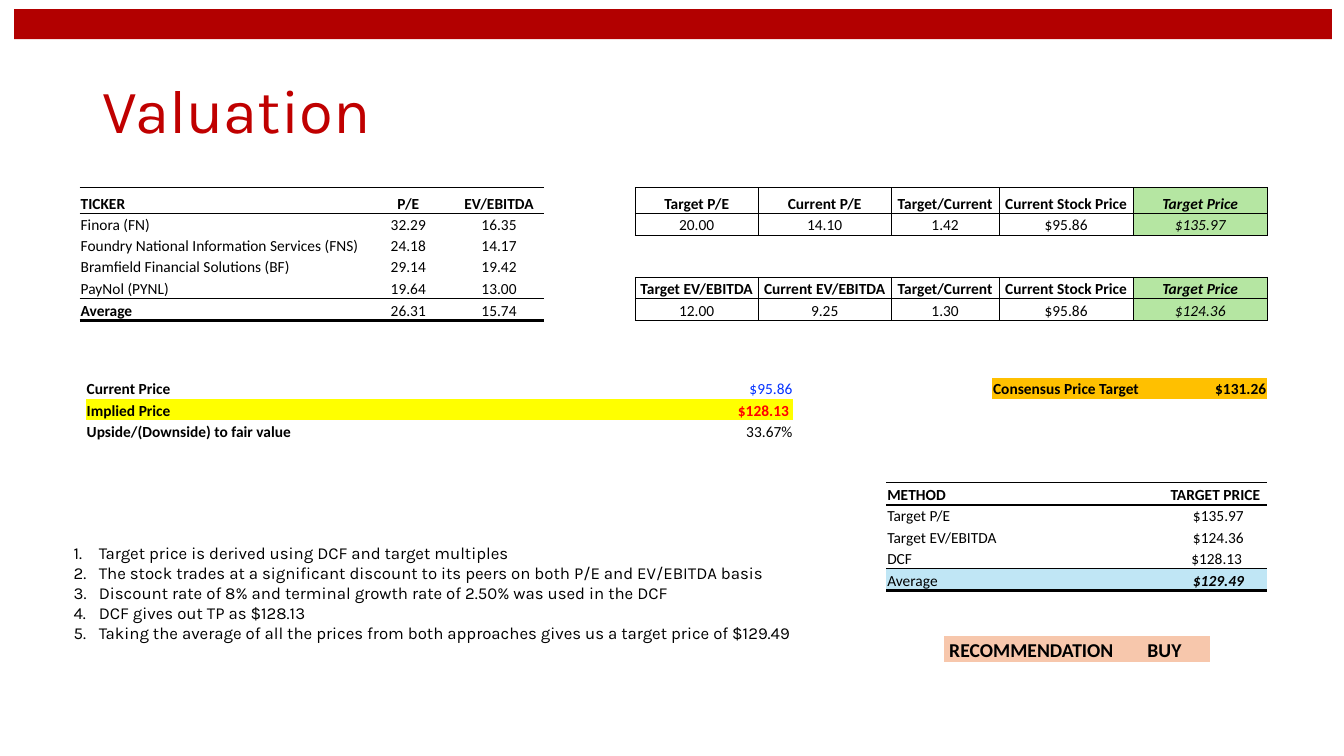
from collections.abc import Callable
from dataclasses import dataclass, field

from lxml.etree import SubElement
from pptx import Presentation
from pptx.dml.color import RGBColor
from pptx.enum.shapes import MSO_SHAPE
from pptx.enum.text import MSO_ANCHOR, MSO_AUTO_SIZE, PP_ALIGN
from pptx.oxml.ns import qn
from pptx.util import Inches, Pt


@dataclass(frozen=True)
class Theme:
    heading_font: str = "Karla"
    table_font: str = "Calibri"
    title_size: int = 44
    banner_size: int = 14
    note_size: int = 12
    table_size: int = 11
    bar: str = "B20000"
    title: str = "C00000"
    ink: str = "000000"
    input_blue: str = "0432FF"
    alert_red: str = "FF0000"
    green: str = "B5E6A2"
    amber: str = "FFC000"
    yellow: str = "FFFF00"
    sky: str = "C0E6F5"
    peach: str = "F7C7AC"


THEME = Theme()
CELL = Inches(0.01)  # the slide is a grid of 1333 columns by 750 rows
COLUMNS, ROWS = 1333, 750
NO_STYLE = "{2D5ABB26-0587-4C30-8999-92F81FD0307C}"
LEFT, CENTER, RIGHT = PP_ALIGN.LEFT, PP_ALIGN.CENTER, PP_ALIGN.RIGHT
THIN, MEDIUM, THICK = 0.5, 1, 2


@dataclass(frozen=True)
class Area:
    column: int
    row: int
    columns: int
    rows: int

    def lengths(self) -> tuple[int, int, int, int]:
        return (self.column * CELL, self.row * CELL,
                self.columns * CELL, self.rows * CELL)


@dataclass
class Look:
    bold: bool = False
    italic: bool = False
    align: PP_ALIGN = LEFT
    color: str = THEME.ink
    fill: str | None = None
    edges: dict[str, float] = field(default_factory=dict)


@dataclass(frozen=True)
class Grid:
    column: int
    row: int
    widths: list[int]
    heights: list[int]
    texts: list[list[str]]
    look: Callable[[int, int], Look]
    size: int = THEME.table_size
    merged: tuple[int, int, int] | None = None  # row, first and last column


def rule_edges(row: int, last: int) -> dict[str, float]:
    """Rules around the heading row and the closing average row."""
    if row == 0:
        return {"T": MEDIUM, "B": MEDIUM}
    return {last - 1: {"B": THIN}, last: {"T": THIN, "B": THICK}}.get(row, {})


def multiples_look(row: int, column: int) -> Look:
    if column < 3:  # peer companies
        return Look(bold=row == 0 or (row == 5 and column == 0),
                    align=CENTER if column else LEFT,
                    edges=rule_edges(row, 5))
    if column == 3 or row in (2, 3):  # gaps
        return Look()
    price = column == 8
    return Look(bold=row in (0, 4), italic=price, align=CENTER,
                fill=THEME.green if price else None,
                edges=dict.fromkeys("LRTB", THIN))


def prices_look(row: int, column: int) -> Look:
    look = Look(bold=row == 1 or column in (0, 5, 7),
                align=RIGHT if column in (2, 7) else LEFT)
    if row == 0 and column >= 5:
        look.fill = THEME.amber
    elif row == 1 and column <= 2:
        look.fill = THEME.yellow
    if column == 2:
        look.color = (THEME.input_blue, THEME.alert_red, THEME.ink)[row]
    return look


def methods_look(row: int, column: int) -> Look:
    average = row == 4
    return Look(bold=row == 0 or (average and column == 1),
                italic=average and column == 1,
                align=CENTER if row and column else LEFT,
                fill=THEME.sky if average else None,
                edges=rule_edges(row, 4))


def advice_look(row: int, column: int) -> Look:
    return Look(bold=True, align=CENTER, fill=THEME.peach)


GRIDS = [
    Grid(79, 186, [281, 90, 90, 90, 122, 132, 107, 133, 133],
         [26, 21, 21, 21, 21, 22], [
        ["TICKER", "P/E", "EV/EBITDA", "", "Target P/E", "Current P/E",
         "Target/Current", "Current Stock Price", "Target Price"],
        ["Finora (FN)", "32.29", "16.35", "", "20.00", "14.10", "1.42", "$95.86", "$135.97"],
        ["Foundry National Information Services (FNS)", "24.18", "14.17"],
        ["Bramfield Financial Solutions (BF)", "29.14", "19.42"],
        ["PayNol (PYNL)", "19.64", "13.00", "", "Target EV/EBITDA", "Current EV/EBITDA",
         "Target/Current", "Current Stock Price", "Target Price"],
        ["Average", "26.31", "15.74", "", "12.00", "9.25", "1.30", "$95.86", "$124.36"],
    ], multiples_look),
    Grid(85, 375, [490, 116, 96, 96, 101, 92, 92, 89], [21] * 3, [
        ["Current Price", "", "$95.86", "", "", "Consensus Price Target", "", "$131.26"],
        ["Implied Price", "", "$128.13 "],
        ["Upside/(Downside) to fair value", "", "33.67%"],
    ], prices_look, merged=(0, 5, 6)),
    Grid(879, 479, [281, 97], [22, 21, 21, 21, 22], [
        ["METHOD", "TARGET PRICE"],
        ["Target P/E", "$135.97"],
        ["Target EV/EBITDA", "$124.36"],
        ["DCF", "$128.13 "],
        ["Average", "$129.49"],
    ], methods_look),
    Grid(936, 631, [174, 90], [26], [["RECOMMENDATION", "BUY"]],
         advice_look, THEME.banner_size),
]

NOTES = [
    "Target price is derived using DCF and target multiples",
    "The stock trades at a significant discount to its peers on both P/E and EV/EBITDA basis",
    "Discount rate of 8% and terminal growth rate of 2.50% was used in the DCF",
    "DCF gives out TP as $128.13",
    "Taking the average of all the prices from both approaches gives us a target price of $129.49",
]


def format_font(font, name: str, size: int, color: str) -> None:
    font.name, font.size = name, Pt(size)
    font.color.rgb = RGBColor.from_string(color)


def place(shape, area: Area) -> None:
    shape.left, shape.top, shape.width, shape.height = area.lengths()


def draw_cell(cell, text: str, look: Look, size: int) -> None:
    cell.margin_left = cell.margin_right = cell.margin_top = CELL
    cell.margin_bottom = 0
    cell.vertical_anchor = MSO_ANCHOR.BOTTOM
    if look.fill:
        cell.fill.solid()
        cell.fill.fore_color.rgb = RGBColor.from_string(look.fill)
    else:
        cell.fill.background()
    # Borders come before the fill, in the order left, right, top, bottom
    properties = cell._tc.get_or_add_tcPr()
    for index, side in enumerate(side for side in "LRTB" if side in look.edges):
        line = SubElement(properties, qn(f"a:ln{side}"), w=str(Pt(look.edges[side])))
        SubElement(SubElement(line, qn("a:solidFill")), qn("a:srgbClr"), val=THEME.ink)
        properties.insert(index, line)
    para = cell.text_frame.paragraphs[0]
    para.text = text
    para.alignment = look.align
    for span in para.runs:
        format_font(span.font, THEME.table_font, size, look.color)
        span.font.bold, span.font.italic = look.bold, look.italic
    SubElement(para._p, qn("a:endParaRPr"), sz=str(size * 100))


def draw_grid(page, grid: Grid) -> None:
    area = Area(grid.column, grid.row, sum(grid.widths), sum(grid.heights))
    table = page.shapes.add_table(len(grid.heights), len(grid.widths), *area.lengths()).table
    table.first_row = table.horz_banding = False
    table._tbl.tblPr.find(qn("a:tableStyleId")).text = NO_STYLE
    for column, width in zip(table.columns, grid.widths):
        column.width = width * CELL
    for r, (row, height, texts) in enumerate(zip(table.rows, grid.heights, grid.texts)):
        row.height = height * CELL
        for c, cell in enumerate(row.cells):
            draw_cell(cell, texts[c] if c < len(texts) else "", grid.look(r, c), grid.size)
    if grid.merged:
        r, first, last = grid.merged
        table.cell(r, first).merge(table.cell(r, last))


def draw_bar(page) -> None:
    bar = page.shapes.add_shape(MSO_SHAPE.RECTANGLE, *Area(14, 9, 1307, 30).lengths())
    bar.shadow.inherit = False
    bar.fill.solid()
    bar.fill.fore_color.rgb = RGBColor.from_string(THEME.bar)
    bar.line.fill.background()


def draw_title(title) -> None:
    place(title, Area(92, 40, 1150, 145))
    title.text_frame.text = "Valuation"
    title.text_frame.vertical_anchor = MSO_ANCHOR.MIDDLE
    para = title.text_frame.paragraphs[0]
    para.alignment, para.line_spacing = LEFT, 0.9
    format_font(para.runs[0].font, THEME.heading_font, THEME.title_size, THEME.title)


def draw_notes(body) -> None:
    place(body, Area(63, 533, 1212, 111))
    frame = body.text_frame
    frame.text = "\n".join(NOTES)
    frame.auto_size = MSO_AUTO_SIZE.SHAPE_TO_FIT_TEXT
    for para in frame.paragraphs:
        properties = para._p.get_or_add_pPr()
        properties.set("marL", str(25 * CELL))
        properties.set("indent", str(-25 * CELL))
        SubElement(properties, qn("a:buFont"), typeface="+mj-lt")
        SubElement(properties, qn("a:buAutoNum"), type="arabicPeriod")
        para.space_before = Pt(0)
        format_font(para.runs[0].font, THEME.heading_font, THEME.note_size, THEME.ink)


def main() -> None:
    deck = Presentation()
    deck.slide_width, deck.slide_height = COLUMNS * CELL, ROWS * CELL
    page = deck.slides.add_slide(deck.slide_layouts[1])
    draw_bar(page)
    draw_title(page.shapes.title)
    draw_notes(page.placeholders[1])
    for grid in GRIDS:
        draw_grid(page, grid)
    deck.save("out.pptx")


if __name__ == "__main__":
    main()
